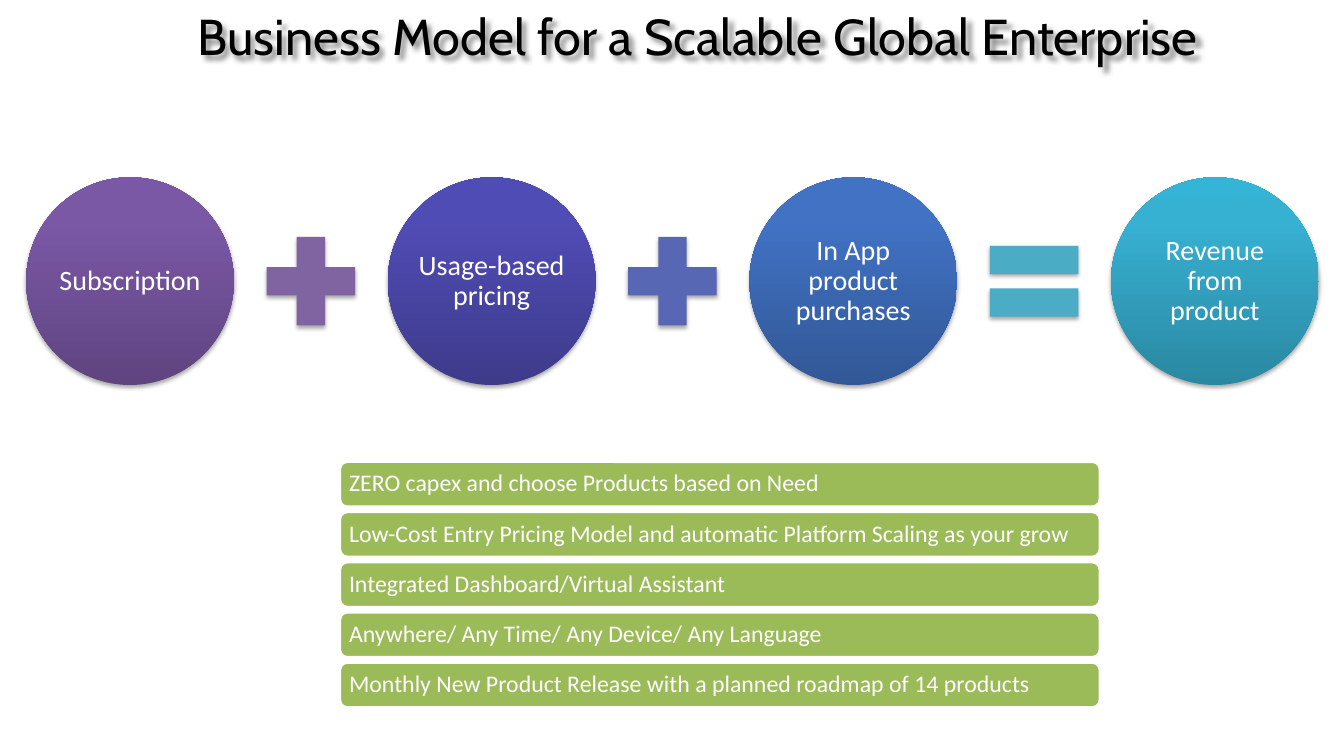
from copy import deepcopy

from lxml.etree import SubElement
from pptx import Presentation
from pptx.dml.color import RGBColor
from pptx.enum.shapes import MSO_SHAPE
from pptx.enum.text import MSO_ANCHOR, MSO_AUTO_SIZE, PP_ALIGN
from pptx.oxml.ns import qn
from pptx.util import Inches, Pt

WHITE = RGBColor(0xFF, 0xFF, 0xFF)
BLACK = RGBColor(0, 0, 0)
GREEN = RGBColor(0x9B, 0xBB, 0x59)
PURPLE = RGBColor(0x80, 0x64, 0xA2)
INDIGO = RGBColor(0x57, 0x67, 0xB4)
TEAL = RGBColor(0x4B, 0xAC, 0xC6)
PURPLES = [RGBColor(0x5F, 0x44, 0x80), RGBColor(0x7B, 0x58, 0xA6), RGBColor(0x7C, 0x57, 0xA8)]
INDIGOS = [RGBColor(0x3E, 0x3B, 0x8B), RGBColor(0x50, 0x4C, 0xB5), RGBColor(0x4F, 0x4B, 0xB8)]
BLUES = [RGBColor(0x32, 0x58, 0x97), RGBColor(0x41, 0x72, 0xC4), RGBColor(0x3F, 0x72, 0xC7)]
TEALS = [RGBColor(0x2A, 0x88, 0xA2), RGBColor(0x37, 0xB1, 0xD2), RGBColor(0x34, 0xB4, 0xD6)]
STOPS = [0, 0.8, 1]

TERMS = [
    ("Subscription", PURPLES),
    ("Usage-based pricing", INDIGOS),
    ("In App product purchases", BLUES),
    ("Revenue from product", TEALS),
]
OPERATORS = [
    (MSO_SHAPE.MATH_PLUS, PURPLE),
    (MSO_SHAPE.MATH_PLUS, INDIGO),
    (MSO_SHAPE.MATH_EQUAL, TEAL),
]
BENEFITS = [
    "ZERO capex and choose Products based on Need",
    "Low-Cost Entry Pricing Model and automatic Platform Scaling as your grow",
    "Integrated Dashboard/Virtual Assistant",
    "Anywhere/ Any Time/ Any Device/ Any Language",
    "Monthly New Product Release with a planned roadmap of 14 products",
]


def add_shadow(sp, blur, distance, angle, alpha):
    sp.shadow.inherit = False
    effects = sp._element.spPr.find(qn("a:effectLst"))
    shadow = SubElement(effects, qn("a:outerShdw"), blurRad=str(Pt(blur)), dist=str(Pt(distance)),
                        dir=str(angle * 60000), algn="tl", rotWithShape="0")
    color = SubElement(shadow, qn("a:srgbClr"), val=str(BLACK))
    SubElement(color, qn("a:alpha"), val=str(alpha * 1000))


def fill_gradient(sp, colors):
    sp.fill.gradient()
    sp.fill.gradient_angle = 90
    stops = sp._element.spPr.find(".//" + qn("a:gsLst"))
    stops.append(deepcopy(stops[0]))
    for stop, position, color in zip(sp.fill.gradient_stops, STOPS, colors):
        stop.position = position
        stop.color.rgb = color


def add_box(s, kind, x, y, w, h):
    sp = s.shapes.add_shape(kind, Inches(x), Inches(y), Inches(w), Inches(h))
    sp.shadow.inherit = False
    sp.line.fill.background()
    return sp


def write_text(sp, text, size, inset, align):
    tf = sp.text_frame
    tf.word_wrap = True
    tf.vertical_anchor = MSO_ANCHOR.MIDDLE
    tf.margin_left = tf.margin_right = tf.margin_top = tf.margin_bottom = Inches(inset)
    p = tf.paragraphs[0]
    p.text = text
    p.alignment = align
    p.line_spacing = 0.9
    p.font.size = Pt(size)
    p.font.name = "Calibri"
    p.font.color.rgb = WHITE


def add_title(s, x, y, w, h):
    title = s.shapes.title
    title.left, title.top, title.width, title.height = (Inches(v) for v in (x, y, w, h))
    add_shadow(title, 4, 4, 45, 45)
    tf = title.text_frame
    tf.word_wrap = True
    tf.auto_size = MSO_AUTO_SIZE.NONE
    tf.vertical_anchor = MSO_ANCHOR.TOP
    p = tf.paragraphs[0]
    p.text = "Business Model for a Scalable Global Enterprise"
    p.alignment = PP_ALIGN.CENTER
    p.font.size = Pt(36)
    p.font.name = "Cabin"
    p.font.color.rgb = BLACK


def add_equation(s, x, y, w, h):
    pitch = (w - h) / (len(TERMS) - 1)
    size = 0.58 * h
    for i, (text, colors) in enumerate(TERMS):
        circle = add_box(s, MSO_SHAPE.OVAL, x + i * pitch, y, h, h)
        fill_gradient(circle, colors)
        add_shadow(circle, 3.1, 1.8, 90, 35)
        write_text(circle, text, 20, 0, PP_ALIGN.CENTER)
    for i, (kind, color) in enumerate(OPERATORS):
        left = x + i * pitch + (pitch + h - size) / 2
        operator = add_box(s, kind, left, y + (h - size) / 2, size, size)
        operator.fill.solid()
        operator.fill.fore_color.rgb = color
        add_shadow(operator, 3.1, 1.8, 90, 35)


def add_benefits(s, x, y, w, h):
    pitch = h / len(BENEFITS)
    for i, text in enumerate(BENEFITS):
        bar = add_box(s, MSO_SHAPE.ROUNDED_RECTANGLE, x, y + i * pitch, w, 0.9 * pitch)
        bar.fill.solid()
        bar.fill.fore_color.rgb = GREEN
        bar.line.color.rgb = WHITE
        bar.line.width = Pt(2)
        write_text(bar, text, 17, 0.07, PP_ALIGN.LEFT)


def main():
    prs = Presentation()
    prs.slide_width, prs.slide_height = Inches(13.33), Inches(7.5)
    s = prs.slides.add_slide(prs.slide_layouts[5])
    add_title(s, 1.67, 0, 10.5, 0.71)
    add_equation(s, 0.26, 1.76, 12.82, 2.06)
    add_benefits(s, 3.37, 4.58, 7.54, 2.49)
    prs.save("out.pptx")


if __name__ == "__main__":
    main()
